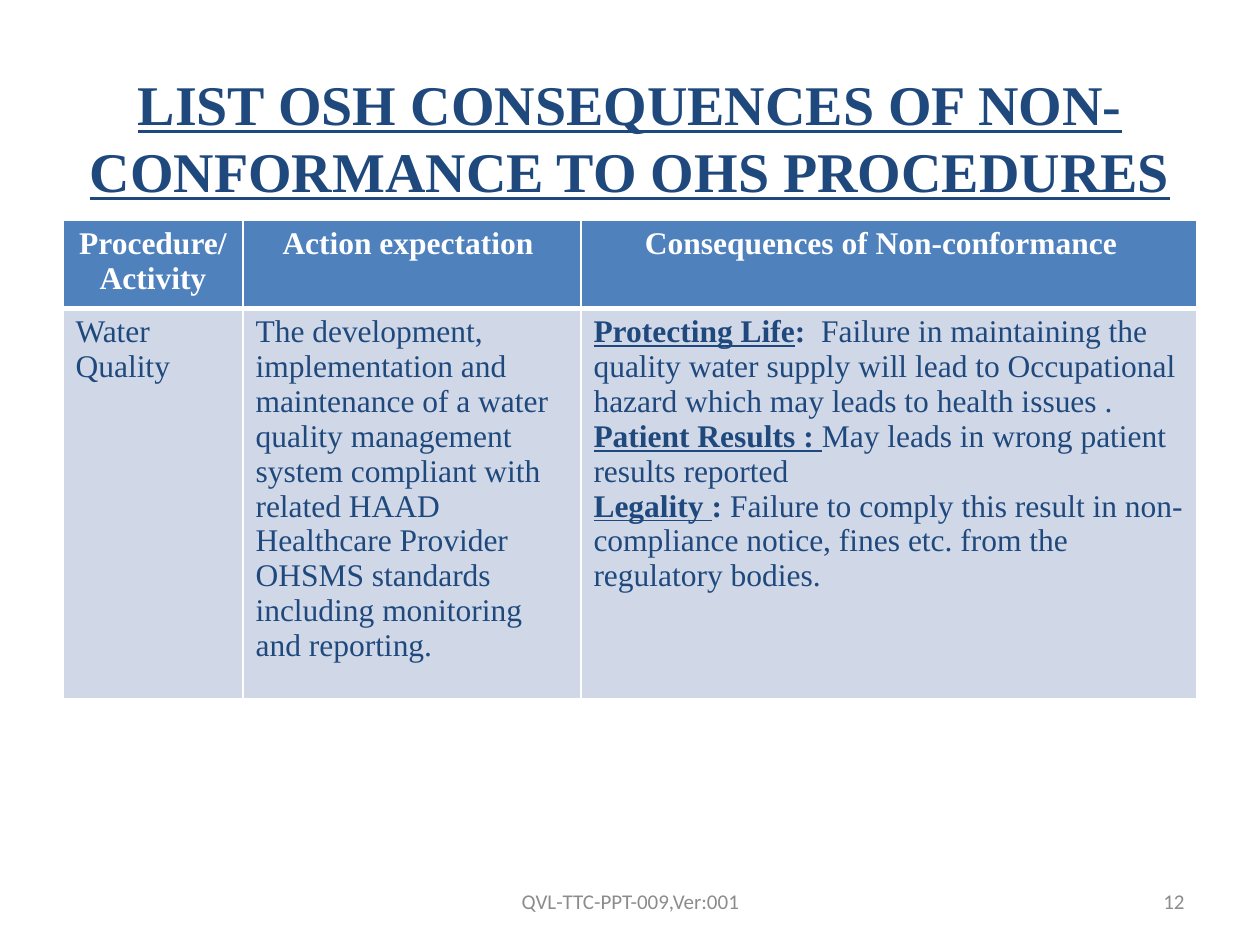
import lxml.etree
import pptx
import pptx.dml.color
import pptx.enum.text
import pptx.oxml.ns
import pptx.util

RGBColor = pptx.dml.color.RGBColor
Align = pptx.enum.text.PP_ALIGN
NAVY = RGBColor(0x1F, 0x49, 0x7D)
BLUE = RGBColor(0x4F, 0x81, 0xBD)
PALE = RGBColor(0xD0, 0xD8, 0xE8)
GREY = RGBColor(0x8C, 0x8C, 0x8C)
WHITE = RGBColor(0xFF, 0xFF, 0xFF)
SERIF = "Times New Roman"
SANS = "Calibri"

HEADERS = ["Procedure/Activity", "Action expectation ", "Consequences of Non-conformance  "]
EXPECTATION = (
    "The development, implementation and maintenance of a water quality management system "
    "compliant with related HAAD Healthcare Provider OHSMS standards including monitoring "
    "and reporting."
)
CONSEQUENCES = [
    ("Protecting Life", ": ", " Failure in maintaining the quality water supply will lead to "
     "Occupational hazard which may leads to health issues ."),
    ("Patient Results : ", "", "May leads in wrong patient results reported"),
    ("Legality ", ": ", "Failure to comply this result in non-compliance notice, fines etc. "
     "from the regulatory bodies."),
]


class SlideBuilder:
    """Holds the scale, the deck and the current slide, and draws each kind of element."""

    def __init__(self, width, height):
        self.deck = pptx.Presentation()
        self.deck.slide_width = self.emu(width)
        self.deck.slide_height = self.emu(height)
        self.page = self.deck.slides.add_slide(self.deck.slide_layouts[6])

    def emu(self, px):
        return pptx.util.Inches(px / 126)

    def style(self, para, size, color, name=SERIF, bold=False, align=Align.LEFT):
        para.alignment = align
        para.font.size = pptx.util.Pt(size)
        para.font.name = name
        para.font.color.rgb = color
        para.font.bold = bold

    def text(self, bounds, words, size, color, **style):
        box = self.page.shapes.add_textbox(*map(self.emu, bounds))
        frame = box.text_frame
        frame.word_wrap = True
        frame.vertical_anchor = pptx.enum.text.MSO_ANCHOR.MIDDLE
        para = frame.paragraphs[0]
        para.text = words
        self.style(para, size, color, **style)
        return para

    def table(self, left, top, widths, heights):
        frame = self.page.shapes.add_table(
            len(heights), len(widths), self.emu(left), self.emu(top),
            self.emu(sum(widths)), self.emu(sum(heights)))
        for column, width in zip(frame.table.columns, widths):
            column.width = self.emu(width)
        for row, height in zip(frame.table.rows, heights):
            row.height = self.emu(height)
        return frame.table

    def cell(self, cell, paragraphs, fill, color, top=1, bottom=1, **style):
        for index, (label, colon, body) in enumerate(paragraphs):
            frame = cell.text_frame
            para = frame.add_paragraph() if index else frame.paragraphs[0]
            self.style(para, 18, color, **style)
            for words, bold, underline in ((label, True, True), (colon, True, False), (body, None, None)):
                if words:
                    span = para.add_run()
                    span.text = words
                    span.font.bold = bold
                    span.font.underline = underline
        self.borders(cell, {"lnL": 1, "lnR": 1, "lnT": top, "lnB": bottom})
        cell.fill.solid()
        cell.fill.fore_color.rgb = fill

    def borders(self, cell, widths):
        qn = pptx.oxml.ns.qn
        properties = cell._tc.get_or_add_tcPr()
        for tag, width in widths.items():
            line = lxml.etree.SubElement(properties, qn("a:" + tag), w=str(pptx.util.Pt(width)))
            fill = lxml.etree.SubElement(line, qn("a:solidFill"))
            lxml.etree.SubElement(fill, qn("a:srgbClr"), val=str(WHITE))


def main():
    slide = SlideBuilder(1260, 945)
    title = slide.text(
        (63, 38, 1134, 197), "LIST OSH CONSEQUENCES OF NON-CONFORMANCE TO OHS PROCEDURES",
        32, NAVY, bold=True, align=Align.CENTER)
    title.font.underline = True

    table = slide.table(63, 220, (180, 338, 616), (52, 52))
    contents = [[("", "", "Water Quality")], [("", "", EXPECTATION)], CONSEQUENCES]
    for column, (header, paragraphs) in enumerate(zip(HEADERS, contents)):
        slide.cell(table.cell(0, column), [("", "", header)], BLUE, WHITE,
                   bottom=3, bold=True, align=Align.CENTER)
        slide.cell(table.cell(1, column), paragraphs, PALE, NAVY, top=3)

    slide.text((903, 876, 294, 50), "12", 12, GREY, name=SANS, align=Align.RIGHT)
    slide.text((431, 876, 399, 50), "QVL-TTC-PPT-009,Ver:001", 12, GREY,
               name=SANS, align=Align.CENTER)
    slide.deck.save("out.pptx")


if __name__ == "__main__":
    main()
